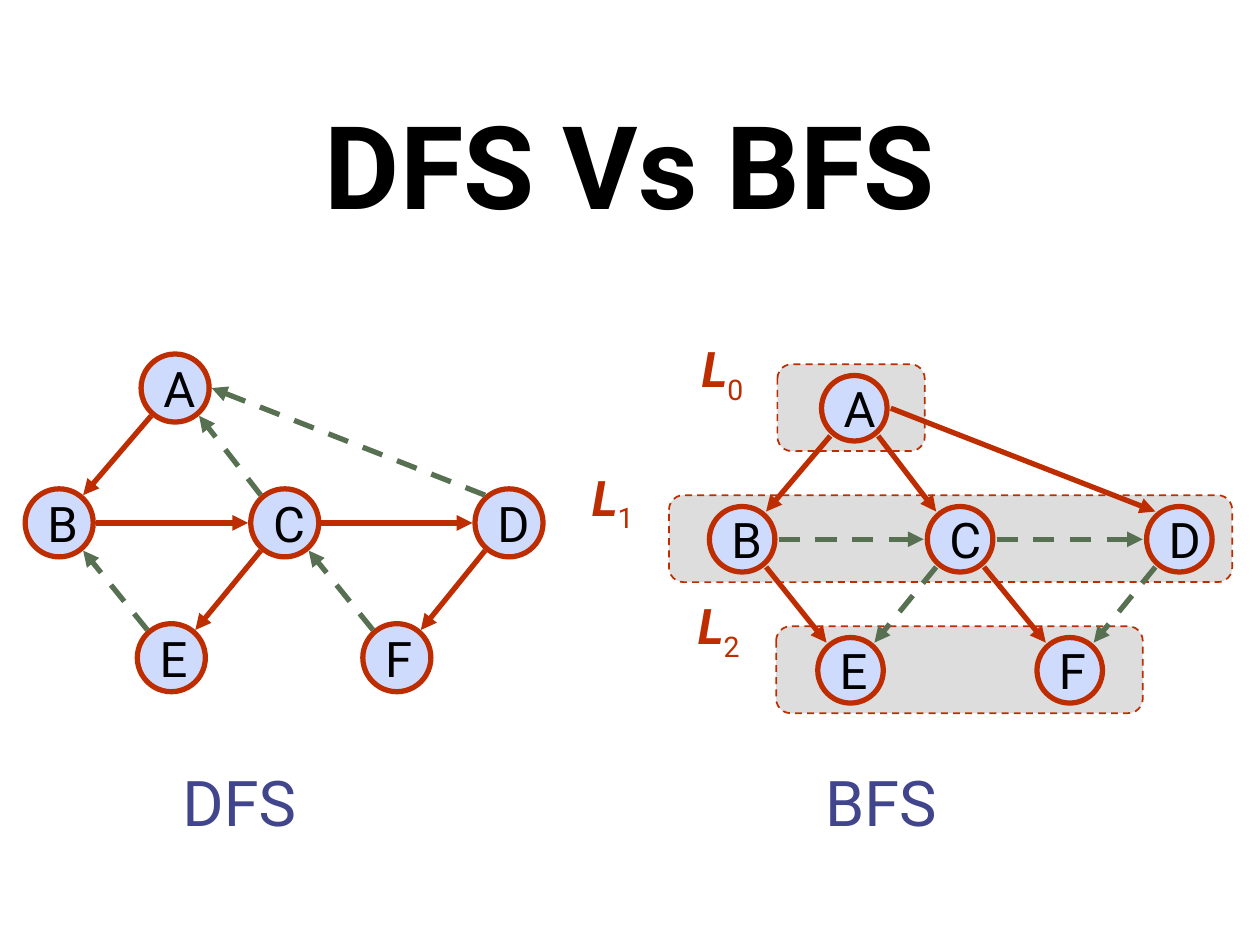
from pptx import Presentation
from pptx import util as u
from pptx.dml.color import RGBColor
from pptx.enum import dml, shapes, text
from pptx.oxml import ns
from lxml import etree

RED = RGBColor(0xBE, 0x2D, 0x00)
GREEN = RGBColor(0x57, 0x70, 0x52)
BLUE = RGBColor(0xCF, 0xDB, 0xFD)
GRAY = RGBColor(0xDD, 0xDD, 0xDD)
INDIGO = RGBColor(0x40, 0x45, 0x8C)
BLACK = RGBColor(0, 0, 0)

ANCHORS = {
    "w": (-0.29, 0), "e": (0.29, 0),
    "nw": (-0.19, -0.22), "ne": (0.19, -0.22),
    "sw": (-0.19, 0.22), "se": (0.19, 0.22),
}


def add_run(p, words, size, color, bold=False, italic=False):
    r = p.add_run()
    r.text = words
    r.font.name = "Roboto"
    r.font.size = u.Pt(size)
    r.font.color.rgb = color
    r.font.bold = bold
    r.font.italic = italic
    return r


def add_box(parent, kind, x, y, w, h, fill, width):
    sp = parent.add_shape(kind, *map(u.Inches, (x, y, w, h)))
    sp.shadow.inherit = False
    sp.fill.solid()
    sp.fill.fore_color.rgb = fill
    sp.line.color.rgb = RED
    sp.line.width = u.Pt(width)
    return sp


prs = Presentation()
prs.slide_width, prs.slide_height = u.Inches(10), u.Inches(7.5)
s = prs.slides.add_slide(prs.slide_layouts[5])

title = s.shapes.title
title.left, title.top = u.Inches(0.5), u.Inches(0.67)
title.width, title.height = u.Inches(9), u.Inches(1.25)
title.text_frame.vertical_anchor = text.MSO_ANCHOR.MIDDLE
p = title.text_frame.paragraphs[0]
p.alignment = text.PP_ALIGN.CENTER
add_run(p, "DFS Vs BFS", 66, BLACK, bold=True)

graphs = [
    {
        "bands": [],
        "levels": [],
        "size": 0.52,
        "nodes": {"A": (6.78, 3.24), "B": (5.89, 4.28), "C": (7.62, 4.28),
                  "D": (9.36, 4.28), "E": (6.75, 5.32), "F": (8.49, 5.32)},
        "tree": ["A sw B ne", "A se C nw", "A e D nw", "B se E nw", "C se F nw"],
        "other": ["B e C w", "C e D w", "C sw E ne", "D sw F ne"],
        "bands": [(6.16, 4.97, 2.91), (5.31, 3.93, 4.47), (6.17, 2.89, 1.17)],
        "levels": [(5.47, 2.64), (4.6, 3.66), (5.44, 4.68)],
        "caption": ("BFS", 6.45),
    },
    {
        "bands": [],
        "levels": [],
        "size": 0.54,
        "nodes": {"A": (1.39, 3.08), "B": (0.47, 4.15), "C": (2.26, 4.15),
                  "D": (4.04, 4.15), "E": (1.36, 5.22), "F": (3.15, 5.22)},
        "tree": ["A sw B ne", "B e C w", "C e D w", "C sw E ne", "D sw F ne"],
        "other": ["C nw A se", "D nw A e", "E nw B se", "F nw C se"],
        "caption": ("DFS", 1.35),
    },
]

for graph in graphs:
    group = s.shapes.add_group_shape().shapes
    for x, y, w in graph["bands"]:
        sp = add_box(group, shapes.MSO_SHAPE.ROUNDED_RECTANGLE, x, y, w, 0.69, GRAY, 1)
        sp.line.dash_style = dml.MSO_LINE.DASH

    d = graph["size"]
    for name, (x, y) in graph["nodes"].items():
        sp = add_box(group, shapes.MSO_SHAPE.OVAL, x - d / 2, y - d / 2, d, d, BLUE, 3)
        tf = sp.text_frame
        tf.word_wrap = False
        tf.vertical_anchor = text.MSO_ANCHOR.MIDDLE
        p = tf.paragraphs[0]
        p.alignment = text.PP_ALIGN.LEFT
        add_run(p, name, 28, BLACK)

    for edges, color in (("tree", RED), ("other", GREEN)):
        for edge in graph[edges]:
            start, leave, end, enter = edge.split()
            ends = [u.Inches(c + o)
                    for node, side in ((start, leave), (end, enter))
                    for c, o in zip(graph["nodes"][node], ANCHORS[side])]
            line = group.add_connector(shapes.MSO_CONNECTOR.STRAIGHT, *ends)
            line.line.color.rgb = color
            line.line.width = u.Pt(3)
            if edges == "other":
                line.line.dash_style = dml.MSO_LINE.DASH
            etree.SubElement(line.line._ln, ns.qn("a:tailEnd"), type="triangle")
            etree.SubElement(line._element.spPr, ns.qn("a:effectLst"))

    for level, (x, y) in enumerate(graph["levels"]):
        sp = group.add_textbox(*map(u.Inches, (x, y, 0.66, 0.57)))
        sp.text_frame.word_wrap = True
        p = sp.text_frame.paragraphs[0]
        add_run(p, "L", 28, RED, bold=True, italic=True)
        r = add_run(p, str(level), 28, RED)
        r.font._element.set("baseline", "-25000")

    caption, x = graph["caption"]
    sp = s.shapes.add_textbox(*map(u.Inches, (x, 6.01, 1.74, 0.71)))
    sp.text_frame.word_wrap = True
    add_run(sp.text_frame.paragraphs[0], caption, 36, INDIGO)

prs.save("out.pptx")
